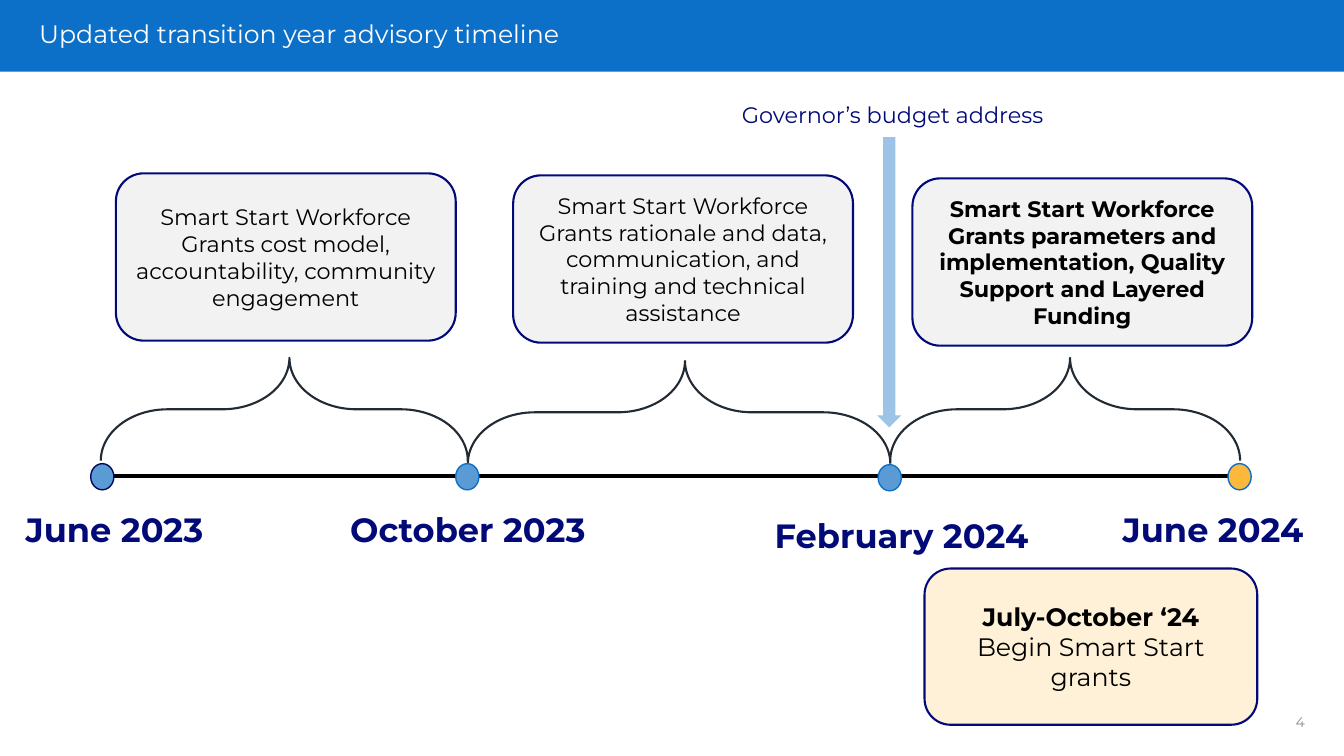
"""Build the transition year advisory timeline slide."""
from dataclasses import dataclass

from lxml import etree
from pptx import Presentation
from pptx.dml.color import RGBColor
from pptx.enum import shapes, text
from pptx.oxml import ns
from pptx.util import Inches, Pt


@dataclass(frozen=True)
class Theme:
    """Colours, type sizes and line widths of the slide."""
    font: str = "Montserrat"
    banner: str = "0C70C8"
    navy: str = "020A78"
    ink: str = "000000"
    white: str = "FFFFFF"
    grey: str = "8C8C8C"
    panel: str = "F2F2F2"
    cream: str = "FEF1D8"
    amber: str = "FBB83A"
    blue: str = "5B9BD5"
    dark_rim: str = "010759"
    pale_blue: str = "9DC3E6"
    slate: str = "222A34"
    date_size: int = 24
    title_size: int = 18
    body_size: int = 16
    number_size: int = 10
    axis_width: float = 3
    outline_width: float = 1.5
    rim_width: float = 1


THEME = Theme()
KIND = shapes.MSO_SHAPE
ALIGN = text.PP_ALIGN
ANCHOR = text.MSO_ANCHOR

AXIS_Y = 4.72
MARKER_SIZE = (0.23, 0.26)
BRACE_DEPTH = 1.02
PHASE_SIZE = (3.37, 1.66)
DATE_HEIGHT = 0.88

PHASES = [
    (1.15, 1.72, "Smart Start Workforce Grants cost model, accountability, "
                 "community engagement", False),
    (5.09, 1.74, "Smart Start Workforce Grants rationale and data, communication, "
                 "and training and technical assistance", False),
    (9.05, 1.77, "Smart Start Workforce Grants parameters and implementation, "
                 "Quality Support and Layered Funding", True),
]
BRACES = [(1.0, 4.64, 3.55), (4.64, 8.83, 3.58), (8.83, 12.3, 3.55)]
MILESTONES = [
    (0.9, 4.6, THEME.blue, THEME.dark_rim),
    (4.52, 4.6, THEME.blue, THEME.banner),
    (8.71, 4.61, THEME.blue, THEME.banner),
    (12.18, 4.6, THEME.amber, THEME.banner),
]
DATES = [
    ("June 2023", 0, 5, 2.27),
    ("October 2023", 3.34, 5, 2.6),
    ("February 2024", 7.53, 5.06, 2.82),
    ("June 2024", 10.73, 5, 2.6),
]


def write(frame, words, size=THEME.body_size, color=THEME.ink, bold=False,
          align=ALIGN.CENTER, anchor=ANCHOR.MIDDLE, wrap=True, spacing=None):
    """Add one formatted paragraph to a text frame."""
    frame.word_wrap = wrap
    frame.vertical_anchor = anchor
    line = frame.add_paragraph() if frame.text else frame.paragraphs[0]
    line.alignment = align
    line.line_spacing = spacing
    run = line.add_run()
    run.text = words
    run.font.name = THEME.font
    run.font.size = Pt(size)
    run.font.bold = bold
    run.font.color.rgb = RGBColor.from_string(color)


def add_label(slide, box, words, **style):
    """Place a text box at left, top, width, height."""
    label = slide.shapes.add_textbox(*map(Inches, box))
    write(label.text_frame, words, **style)


def add_figure(slide, kind, box, fill=None, line=None, width=THEME.outline_width):
    """Place a preset shape with an optional fill and outline."""
    figure = slide.shapes.add_shape(kind, *map(Inches, box))
    figure.shadow.inherit = False
    if fill:
        figure.fill.solid()
        figure.fill.fore_color.rgb = RGBColor.from_string(fill)
    else:
        figure.fill.background()
    if line:
        figure.line.color.rgb = RGBColor.from_string(line)
        figure.line.width = Pt(width)
    else:
        figure.line.fill.background()
    return figure


def add_axis(slide, start, end):
    """Draw the horizontal time axis."""
    axis = slide.shapes.add_connector(
        shapes.MSO_CONNECTOR.STRAIGHT,
        *map(Inches, (start, AXIS_Y, end, AXIS_Y)))
    axis.line.color.rgb = RGBColor.from_string(THEME.ink)
    axis.line.width = Pt(THEME.axis_width)
    etree.SubElement(axis._element.spPr, ns.qn("a:effectLst"))


def add_brace(slide, start, end, top):
    """Draw an upward brace spanning two dates."""
    span = end - start
    left = (start + end - BRACE_DEPTH) / 2
    upright_top = top + (BRACE_DEPTH - span) / 2
    brace = add_figure(slide, KIND.RIGHT_BRACE,
                       (left, upright_top, BRACE_DEPTH, span), line=THEME.slate)
    brace.adjustments[0] = 0.651
    brace.adjustments[1] = 0.514
    brace.rotation = 270


def add_header(slide):
    """Draw the banner, title and slide number."""
    add_figure(slide, KIND.RECTANGLE, (0, 0, 13.33, 0.71), THEME.banner)
    add_label(slide, (0.29, 0.16, 8.42, 0.38),
              "Updated transition year advisory timeline", size=THEME.title_size,
              color=THEME.white, align=ALIGN.LEFT, spacing=0.9)
    add_label(slide, (10.04, 6.96, 3, 0.4), "4", size=THEME.number_size,
              color=THEME.grey, align=ALIGN.RIGHT)


def add_timeline(slide):
    """Draw the axis with its phases, braces, milestones and dates."""
    add_axis(slide, 0.9, 12.3)
    for start, end, top in BRACES:
        add_brace(slide, start, end, top)
    for left, top, words, bold in PHASES:
        phase = add_figure(slide, KIND.ROUNDED_RECTANGLE, (left, top, *PHASE_SIZE),
                           THEME.panel, THEME.navy)
        write(phase.text_frame, words, bold=bold)
    for left, top, fill, rim in MILESTONES:
        add_figure(slide, KIND.OVAL, (left, top, *MARKER_SIZE), fill, rim,
                   THEME.rim_width)
    for words, left, top, width in DATES:
        add_label(slide, (left, top, width, DATE_HEIGHT), words,
                  size=THEME.date_size, color=THEME.navy, bold=True,
                  anchor=ANCHOR.TOP)


def add_events(slide):
    """Draw the budget address arrow and the grant launch box."""
    add_figure(slide, KIND.DOWN_ARROW, (8.7, 1.36, 0.24, 2.88), THEME.pale_blue)
    add_label(slide, (7.26, 0.95, 3.34, 0.37), "Governor’s budget address",
              color=THEME.navy, align=ALIGN.LEFT, anchor=ANCHOR.TOP, wrap=False)
    launch = add_figure(slide, KIND.FLOWCHART_ALTERNATE_PROCESS,
                        (9.17, 5.64, 3.3, 1.55), THEME.cream, THEME.navy)
    write(launch.text_frame, "July-October ‘24", size=THEME.title_size, bold=True)
    write(launch.text_frame, "Begin Smart Start grants", size=THEME.title_size)


def main():
    """Build and save the presentation."""
    deck = Presentation()
    deck.slide_width = Inches(13.33)
    deck.slide_height = Inches(7.5)
    slide = deck.slides.add_slide(deck.slide_layouts[6])
    add_header(slide)
    add_timeline(slide)
    add_events(slide)
    deck.save("out.pptx")


if __name__ == "__main__":
    main()
